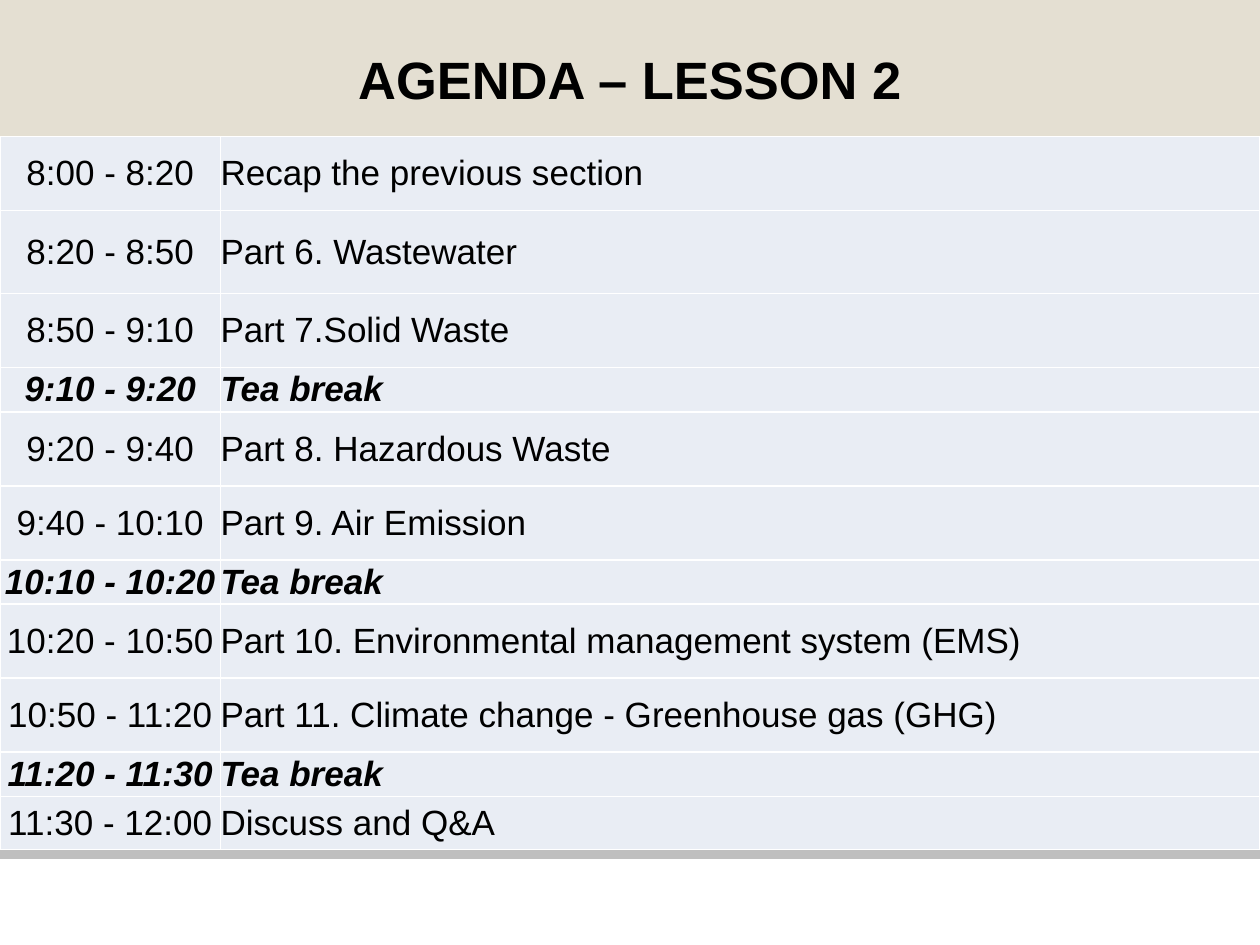
from lxml.etree import SubElement
from pptx import Presentation
from pptx.dml.color import RGBColor
from pptx.enum.shapes import MSO_SHAPE as Shape
from pptx.enum.text import MSO_ANCHOR as Anchor, MSO_AUTO_SIZE as AutoSize, PP_ALIGN as Align
from pptx.oxml.ns import qn
from pptx.util import Pt

# Content
TITLE = "AGENDA – LESSON 2"
BREAK = "Tea break"
AGENDA = [
    ("8:00 - 8:20", "Recap the previous section"),
    ("8:20 - 8:50", "Part 6. Wastewater"),
    ("8:50 - 9:10", "Part 7.Solid Waste"),
    ("9:10 - 9:20", BREAK),
    ("9:20 - 9:40", "Part 8. Hazardous Waste"),
    ("9:40 - 10:10", "Part 9. Air Emission"),
    ("10:10 - 10:20", BREAK),
    ("10:20 - 10:50", "Part 10. Environmental management system (EMS)"),
    ("10:50 - 11:20", "Part 11. Climate change - Greenhouse gas (GHG)"),
    ("11:20 - 11:30", BREAK),
    ("11:30 - 12:00", "Discuss and Q&A"),
]

# Sizes in points
WIDTH, HEIGHT = 720, 540
BAND_HEIGHT = 78
TIME_WIDTH = 126
SESSION_HEIGHT, BREAK_HEIGHT = 42.3, 25.3
SPECIAL_HEIGHTS = {1: 47.5, len(AGENDA) - 1: 30.3}
RULE_TOP, RULE_HEIGHT = 486, 3.6

FONT = "Arial"
BLACK, WHITE, SAND, PALE, GREY = "000000", "FFFFFF", "E4DFD2", "E9EDF4", "BFBFBF"


def color(hex_value):
    return RGBColor.from_string(hex_value)


def add_bar(slide, top, height, fill):
    bar = slide.shapes.add_shape(Shape.RECTANGLE, 0, Pt(top), Pt(WIDTH), Pt(height))
    bar.shadow.inherit = False
    bar.fill.solid()
    bar.fill.fore_color.rgb = color(fill)
    bar.line.fill.background()
    return bar


def clear_margins(holder):
    holder.margin_left = holder.margin_right = holder.margin_top = holder.margin_bottom = 0


def format_font(paragraph, size, bold=False, italic=False):
    for run in paragraph.runs:
        font = run.font
        font.name, font.size, font.bold, font.italic = FONT, Pt(size), bold, italic
        font.color.rgb = color(BLACK)


def add_borders(cell, hex_value, width):
    properties = cell._tc.get_or_add_tcPr()
    for side in ("a:lnL", "a:lnR", "a:lnT", "a:lnB"):
        border = SubElement(properties, qn(side), w=str(Pt(width)))
        SubElement(SubElement(border, qn("a:solidFill")), qn("a:srgbClr"), val=hex_value)


def row_height(index, topic):
    return SPECIAL_HEIGHTS.get(index, BREAK_HEIGHT if topic == BREAK else SESSION_HEIGHT)


def fill_cell(cell, text, align, is_break):
    cell.text_frame.text = text
    clear_margins(cell)
    cell.vertical_anchor = Anchor.MIDDLE
    paragraph = cell.text_frame.paragraphs[0]
    paragraph.alignment = align
    format_font(paragraph, 20, bold=is_break, italic=is_break)
    add_borders(cell, WHITE, 1)
    cell.fill.solid()
    cell.fill.fore_color.rgb = color(PALE)


def main():
    deck = Presentation()
    deck.slide_width, deck.slide_height = Pt(WIDTH), Pt(HEIGHT)
    slide = deck.slides.add_slide(deck.slide_layouts[5])

    # Bottom rule and title band
    rule = add_bar(slide, RULE_TOP, RULE_HEIGHT, GREY)
    rule.line.color.rgb = color(GREY)
    rule.line.width = Pt(2)
    add_bar(slide, 0, BAND_HEIGHT, SAND)

    # Title, brought in front of the band
    title = slide.shapes.title
    slide.shapes._spTree.append(title._element)
    title.left, title.top, title.width, title.height = Pt(27), Pt(30), Pt(666), Pt(33)
    frame = title.text_frame
    frame.text = TITLE
    frame.word_wrap = True
    frame.auto_size = AutoSize.NONE
    frame.vertical_anchor = Anchor.TOP
    clear_margins(frame)
    heading = frame.paragraphs[0]
    heading.alignment = Align.CENTER
    heading.line_spacing = Pt(32.7)
    heading.space_before = Pt(1.6)
    format_font(heading, 30, bold=True)

    # Agenda table
    heights = [row_height(i, topic) for i, (_, topic) in enumerate(AGENDA)]
    table = slide.shapes.add_table(
        len(AGENDA), 2, 0, Pt(BAND_HEIGHT), Pt(WIDTH), Pt(sum(heights))).table
    table.first_row = table.horz_banding = False
    table.columns[0].width = Pt(TIME_WIDTH)
    table.columns[1].width = Pt(WIDTH - TIME_WIDTH)
    for row, height, (time, topic) in zip(table.rows, heights, AGENDA):
        row.height = Pt(height)
        fill_cell(row.cells[0], time, Align.CENTER, topic == BREAK)
        fill_cell(row.cells[1], topic, Align.LEFT, topic == BREAK)

    deck.save("out.pptx")


if __name__ == "__main__":
    main()
